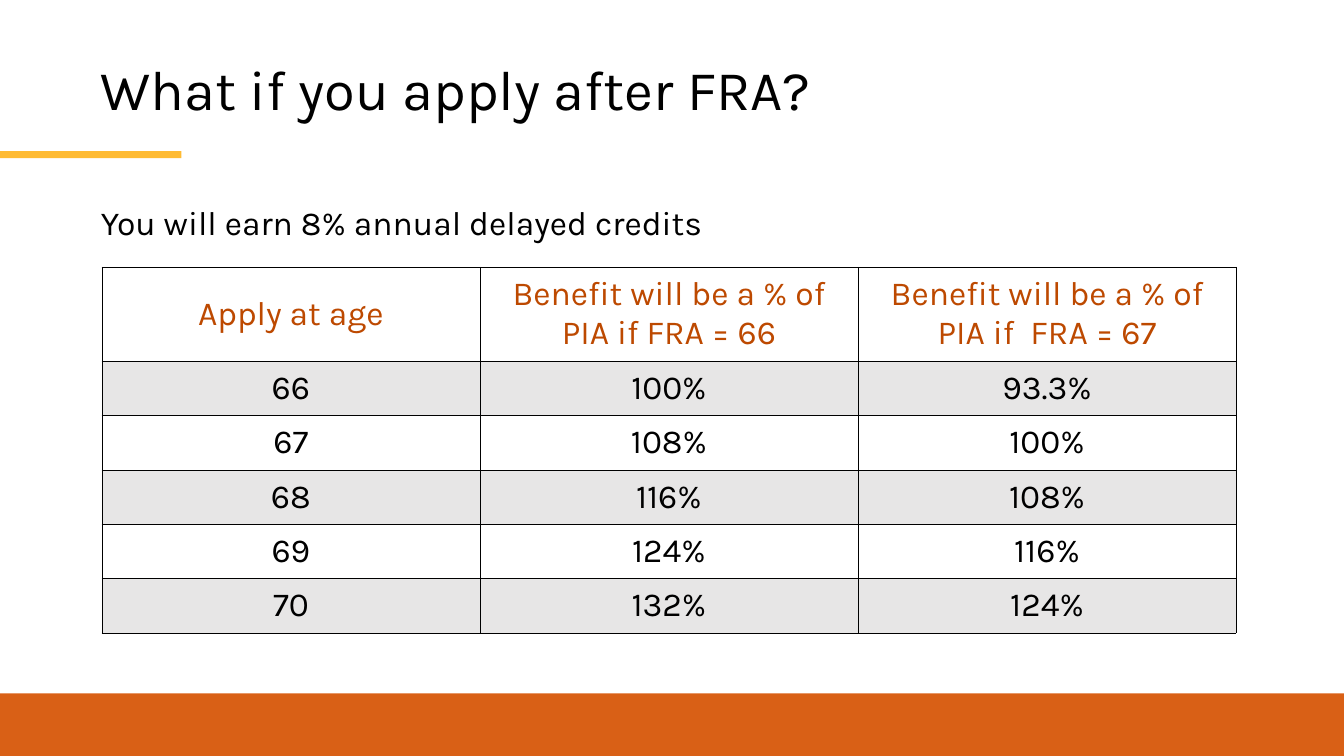
from dataclasses import dataclass

from lxml.etree import SubElement
from pptx import Presentation
from pptx.dml.color import RGBColor
from pptx.enum.shapes import MSO_SHAPE as Shape
from pptx.enum.text import MSO_ANCHOR as Anchor, MSO_AUTO_SIZE as AutoSize, PP_ALIGN as Align
from pptx.oxml.ns import qn
from pptx.util import Pt

EMU_PER_PX = 9144
TITLE_ONLY = 5


@dataclass(frozen=True)
class Theme:
    font: str = "Karla"
    black: str = "000000"
    footer: str = "D96016"
    accent: str = "FFBB33"
    header: str = "BD4900"
    band: str = "E7E6E6"
    title_size: int = 40
    body_size: int = 24
    border: float = 0.25


def px(*lengths):
    return [length * EMU_PER_PX for length in lengths]


def write_text(frame, text, *, font, size, color, align=Align.LEFT,
               anchor=Anchor.TOP, insets=(0, 0, 0, 0), spacing=1.0):
    frame.word_wrap = True
    frame.vertical_anchor = anchor
    (frame.margin_left, frame.margin_top,
     frame.margin_right, frame.margin_bottom) = px(*insets)
    paragraph = frame.paragraphs[0]
    paragraph.alignment = align
    paragraph.line_spacing = spacing
    run = paragraph.add_run()
    run.text = text
    run.font.name = font
    run.font.size = Pt(size)
    run.font.bold = False
    run.font.color.rgb = RGBColor.from_string(color)


class SlideBuilder:
    def __init__(self, slide, theme):
        self.slide = slide
        self.theme = theme

    def title(self, text, box):
        title = self.slide.shapes.title
        title.left, title.top, title.width, title.height = px(*box)
        title.text_frame.auto_size = AutoSize.NONE
        write_text(title.text_frame, text, font=self.theme.font,
                   size=self.theme.title_size, color=self.theme.black,
                   insets=(0, 17, 0, 0), spacing=0.9)

    def bar(self, box, color):
        shape = self.slide.shapes.add_shape(Shape.RECTANGLE, *px(*box))
        shape.shadow.inherit = False
        shape.fill.solid()
        shape.fill.fore_color.rgb = RGBColor.from_string(color)
        shape.line.fill.background()

    def text(self, text, box):
        shape = self.slide.shapes.add_textbox(*px(*box))
        write_text(shape.text_frame, text, font=self.theme.font,
                   size=self.theme.body_size, color=self.theme.black)

    def table(self, rows, left, top, column_width, header_height, row_height):
        columns = len(rows[0])
        height = header_height + row_height * (len(rows) - 1)
        box = px(left, top, column_width * columns, height)
        table = self.slide.shapes.add_table(len(rows), columns, *box).table
        table.first_row = table.horz_banding = False
        for column in table.columns:
            column.width, = px(column_width)
        for row_index, values in enumerate(rows):
            is_header = row_index == 0
            table.rows[row_index].height, = px(header_height if is_header else row_height)
            for column_index, value in enumerate(values):
                cell = table.cell(row_index, column_index)
                self.border(cell)
                if row_index % 2:
                    cell.fill.solid()
                    cell.fill.fore_color.rgb = RGBColor.from_string(self.theme.band)
                else:
                    cell.fill.background()
                self.cell_text(cell, value, is_header, column_index == 0)

    def cell_text(self, cell, value, is_header, is_first):
        insets = (0, 0, 0, 0) if is_first else (12, 6, 12, 6)
        write_text(cell.text_frame, value, font=self.theme.font,
                   size=self.theme.body_size, align=Align.CENTER,
                   color=self.theme.header if is_header else self.theme.black)
        cell.vertical_anchor = Anchor.MIDDLE
        (cell.margin_left, cell.margin_top,
         cell.margin_right, cell.margin_bottom) = px(*insets)

    def border(self, cell):
        properties = cell._tc.get_or_add_tcPr()
        for side in ("a:lnL", "a:lnR", "a:lnT", "a:lnB"):
            line = SubElement(properties, qn(side), w=str(Pt(self.theme.border)))
            fill = SubElement(line, qn("a:solidFill"))
            SubElement(fill, qn("a:srgbClr"), val=self.theme.black)


def main():
    presentation = Presentation()
    presentation.slide_width, presentation.slide_height = px(1333, 750)
    slide = presentation.slides.add_slide(presentation.slide_layouts[TITLE_ONLY])
    theme = Theme()
    builder = SlideBuilder(slide, theme)
    builder.bar((0, 688, 1333, 62), theme.footer)
    builder.title("What if you apply after FRA?", (100, 45, 1147, 130))
    builder.bar((0, 150, 180, 7), theme.accent)
    builder.text("You will earn 8% annual delayed credits", (100, 200, 1126, 40))
    rows = [
        ("Apply at age", "Benefit will be a % of PIA if FRA = 66",
         "Benefit will be a % of PIA if  FRA = 67"),
        ("66", "100%", "93.3%"),
        ("67", "108%", "100%"),
        ("68", "116%", "108%"),
        ("69", "124%", "116%"),
        ("70", "132%", "124%"),
    ]
    builder.table(rows, left=101, top=265, column_width=375,
                  header_height=93, row_height=54)
    presentation.save("out.pptx")


if __name__ == "__main__":
    main()
